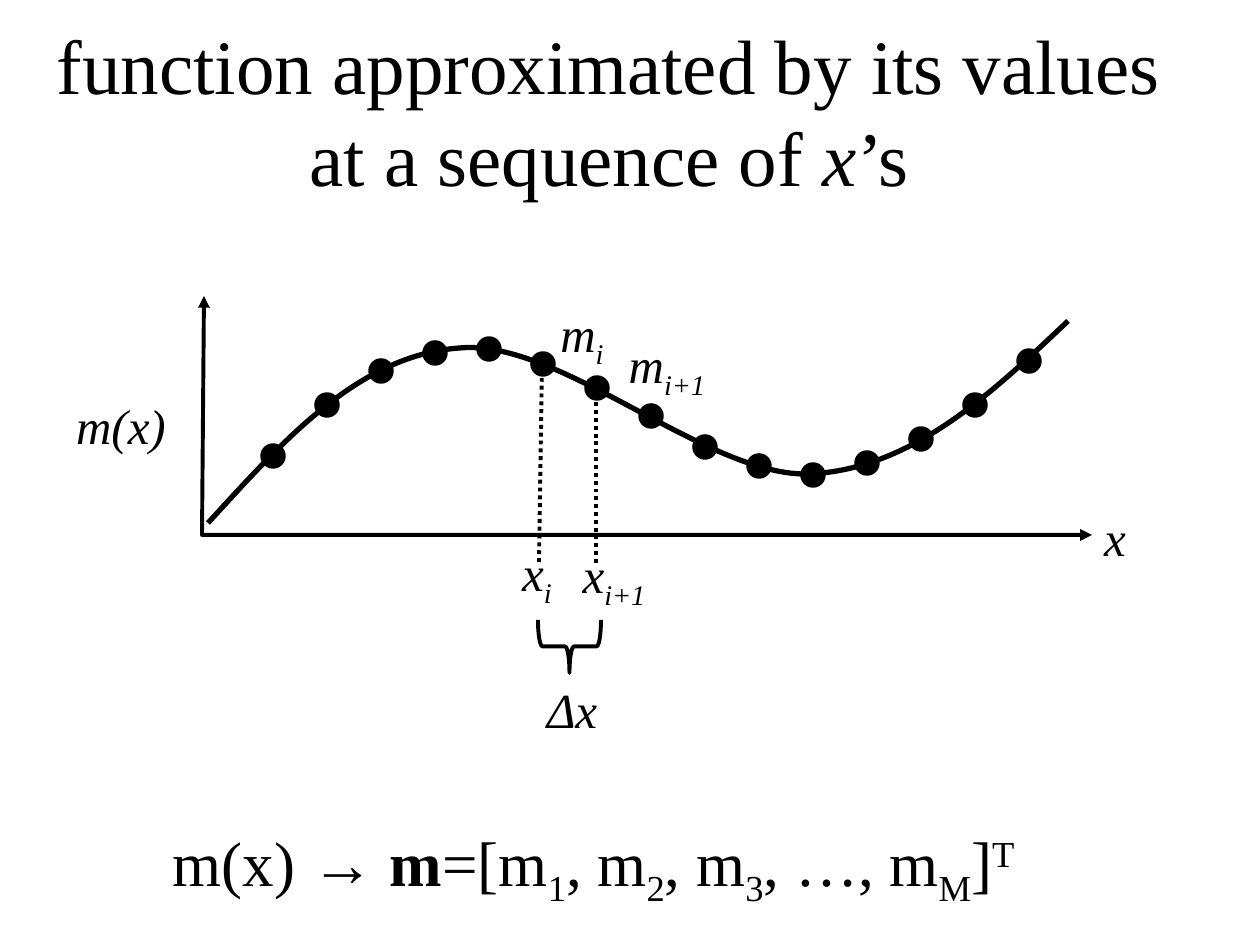
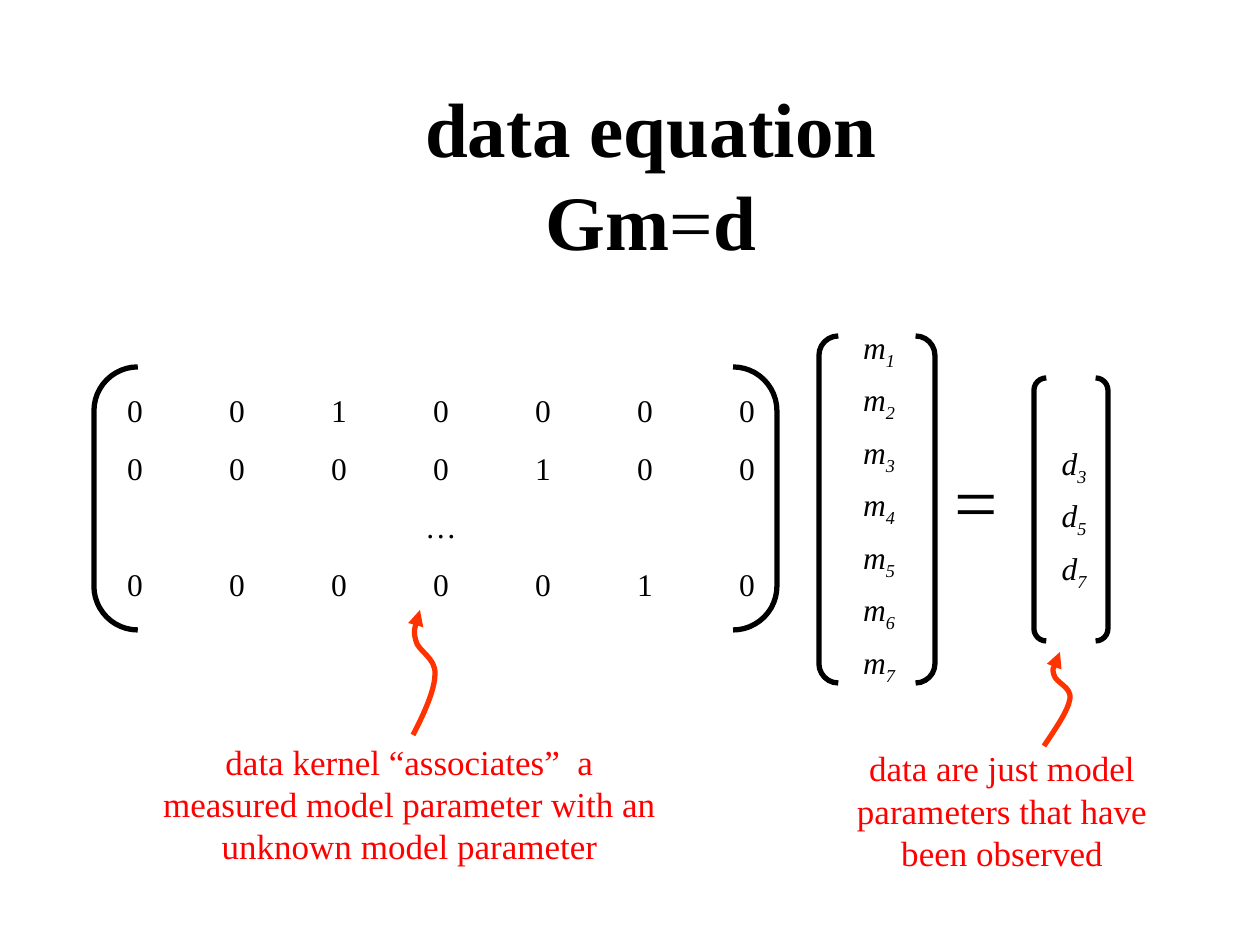
import lxml.etree
import pptx
import pptx.dml.color
import pptx.enum.dml
import pptx.enum.shapes
import pptx.enum.text
import pptx.oxml.ns
import pptx.util

PX = 9144000 / 1260  # EMU in one px, 126 px to the inch
FONT = "Times New Roman"
BLACK, WHITE, RED, ORANGE = "000000", "FFFFFF", "FF0000", "FF3300"
SHAPE = pptx.enum.shapes.MSO_SHAPE

# Text is a list of (text, style) runs; style holds any of i, b, sub, sup.
# Boxes are (left, top, width, height).
TITLE_SIZE = 44
SEQUENCE_TITLE = [("function approximated by its values at a sequence of ", ""),
                  ("x", "i"), ("’s", "")]
SEQUENCE_TITLE_BOX = (42, 31, 1134, 158)
AXES = [(204, 296), (202, 535), (1092, 535)]
CURVE = [(208, 523), (284, 440), (359, 355), (460, 348), (561, 339), (708, 478),
         (810, 474), (911, 469), (989, 396), (1068, 321)]
DOT_LEFT, DOT_STEP, DOT_SIZE = 273, 54, 22
DOT_YS = [456, 405, 371, 353, 349, 364, 388, 416, 447, 466, 475, 463, 439, 405, 361]
DROP_LINES = [((539, 562), (542, 364)), ((596, 563), (596, 392))]
LABEL_SIZE = (200, 105)
LABELS = [  # centre x, centre y, main text, subscript
    (121, 424, "m(x)", ""), (1115, 536, "x", ""),
    (582, 336, "m", "i"), (667, 367, "m", "i+1"),
    (537, 575, "x", "i"), (614, 577, "x", "i+1"), (572, 708, "Δx", "")]
BRACE_BOX = (543, 615, 53, 63)
VECTOR = [("m(x) ", ""), ("→ ", "i"), ("m", "b"), ("=[m", ""), ("1", "sub"),
          (", m", ""), ("2", "sub"), (", m", ""), ("3", "sub"),
          (", …, m", ""), ("M", "sub"), ("]", ""), ("T ", "sup")]
VECTOR_BOX = (31, 787, 1134, 158)

EQUATION_TITLE = [("data equation", "b"), ("\n", ""), ("Gm", "b"), ("=", ""), ("d", "b")]
EQUATION_TITLE_BOX = (84, 73, 1134, 200)
KERNEL = ["0010000", "0000100", "   …   ", "0000010"]
TABLES = [  # left, top, column width, row height, rows of cells of runs
    (84, 388, 102, 58, [[[(c.strip(), "")] for c in row] for row in KERNEL]),
    (819, 325, 120, 52, [[[("m", "i"), (n, "i sub")]] for n in "1234567"]),
    (1014, 441, 120, 52, [[[("d", "i"), (n, "i sub")]] for n in "357"])]
BRACKETS = [(94, 367, 683, 263), (819, 336, 116, 347), (1034, 378, 74, 263)]
EQUALS_BOX = (892, 421, 168, 158)
NOTES = [  # text, box, arrow curve from its head
    ("data are just model parameters that have been observed", (829, 768, 346, 84),
     [(1060, 652), (1057, 660), (1052, 668), (1054, 675), (1056, 683), (1072, 687),
      (1070, 699), (1068, 711), (1056, 728), (1044, 746)]),
    ("data kernel “associates”  a measured model parameter with an unknown model parameter",
     (147, 746, 525, 116),
     [(420, 610), (417, 620), (413, 630), (416, 641), (418, 651), (436, 658),
      (435, 674), (435, 689), (425, 712), (413, 735)])]


def emu(*lengths):
    return [round(v * PX) for v in lengths]


def rgb(value):
    return pptx.dml.color.RGBColor.from_string(value)


def sub(parent, tag, **attrs):
    """Append an XML child in the drawing namespaces."""
    return lxml.etree.SubElement(parent, pptx.oxml.ns.qn(tag), attrs)


def write(tf, runs, size, color=BLACK, anchor=True):
    if anchor:
        tf.word_wrap = True
        tf.auto_size = pptx.enum.text.MSO_AUTO_SIZE.NONE
        tf.vertical_anchor = pptx.enum.text.MSO_ANCHOR.MIDDLE
    p = tf.paragraphs[0]
    p.alignment = pptx.enum.text.PP_ALIGN.CENTER
    p.font.name, p.font.size = FONT, pptx.util.Pt(size)
    p.font.color.rgb = rgb(color)
    for text, style in runs:
        if text == "\n":
            p.add_line_break()
            continue
        r = p.add_run()
        r.text = text
        styles = style.split()
        if "i" in styles:
            r.font.italic = True
        if "b" in styles:
            r.font.bold = True
        for name, shift in (("sub", "-25000"), ("sup", "30000")):
            if name in styles:
                r.font._element.set("baseline", shift)


def add_text(s, box, runs, size, color=BLACK):
    write(s.shapes.add_textbox(*emu(*box)).text_frame, runs, size, color)


def add_slide(prs, title, box):
    s = prs.slides.add_slide(prs.slide_layouts[5])
    sp = s.shapes.title
    sp.left, sp.top, sp.width, sp.height = emu(*box)
    write(sp.text_frame, title, TITLE_SIZE)
    return s


def style_line(sp, width, color=BLACK, heads=()):
    sp.line.color.rgb = rgb(color)
    sp.line.width = pptx.util.Pt(width)
    for end in heads:
        sub(sp.line._get_or_add_ln(), "a:" + end, type="triangle")


def add_outline(s, kind, box, width):
    sp = s.shapes.add_shape(kind, *emu(*box))
    sp.shadow.inherit = False
    sp.fill.background()
    style_line(sp, width)
    return sp


def add_path(s, points, width, color=BLACK, heads=(), curved=False):
    """Draw an open path; a curved one takes its points as cubic Bézier controls."""
    builder = s.shapes.build_freeform(*points[0], scale=PX)
    builder.add_line_segments(points[1:], close=False)
    sp = builder.convert_to_shape()
    sp.shadow.inherit = False
    sp.fill.background()
    style_line(sp, width, color, heads)
    if curved:
        path = sp._element.find(".//" + pptx.oxml.ns.qn("a:path"))
        segments = path.findall(pptx.oxml.ns.qn("a:lnTo"))
        for i in range(0, len(segments), 3):
            curve = sub(path, "a:cubicBezTo")
            for segment in segments[i:i + 3]:
                curve.append(segment[0])
                path.remove(segment)


def add_matrix(s, left, top, col_width, row_height, rows):
    n_rows, n_cols = len(rows), len(rows[0])
    box = emu(left, top, n_cols * col_width, n_rows * row_height)
    table = s.shapes.add_table(n_rows, n_cols, *box).table
    table.first_row = table.horz_banding = False
    for row, cells in zip(table.rows, rows):
        for cell, runs in zip(row.cells, cells):
            write(cell.text_frame, [r for r in runs if r[0]], 18, anchor=False)
            tc_pr = cell._tc.get_or_add_tcPr()
            for side in ("a:lnL", "a:lnR", "a:lnT", "a:lnB"):
                sub(sub(tc_pr, side, w="0"), "a:noFill")
            cell.fill.solid()
            cell.fill.fore_color.rgb = rgb(WHITE)


def build_sequence_slide(prs):
    s = add_slide(prs, SEQUENCE_TITLE, SEQUENCE_TITLE_BOX)
    add_path(s, CURVE, 3, curved=True)
    add_path(s, AXES, 2.25, heads=("headEnd", "tailEnd"))
    for i, y in enumerate(DOT_YS):
        x = DOT_LEFT + i * DOT_STEP
        half = DOT_SIZE // 2
        dot = add_outline(s, SHAPE.OVAL, (x - half, y - half, DOT_SIZE, DOT_SIZE), 2)
        dot.fill.solid()
        dot.fill.fore_color.rgb = rgb(BLACK)
    for start, end in DROP_LINES:
        line = s.shapes.add_connector(pptx.enum.shapes.MSO_CONNECTOR.STRAIGHT,
                                      *emu(*start, *end))
        style_line(line, 2.25)
        line.line.dash_style = pptx.enum.dml.MSO_LINE.ROUND_DOT
        sub(line._element.spPr, "a:effectLst")
    width, height = LABEL_SIZE
    for x, y, text, index in LABELS:
        runs = [(text, "i")] + ([(index, "i sub")] if index else [])
        add_text(s, (x - width // 2, y - height // 2, width, height), runs, 28)
    add_outline(s, SHAPE.RIGHT_BRACE, BRACE_BOX, 2.25).rotation = 90
    add_text(s, VECTOR_BOX, VECTOR, 36)


def build_equation_slide(prs):
    s = add_slide(prs, EQUATION_TITLE, EQUATION_TITLE_BOX)
    for table in TABLES:
        add_matrix(s, *table)
    for box in BRACKETS:
        add_outline(s, SHAPE.DOUBLE_BRACKET, box, 3)
    add_text(s, EQUALS_BOX, [("=", "")], TITLE_SIZE)
    for text, box, arrow in NOTES:
        add_path(s, arrow, 3, ORANGE, heads=("headEnd",), curved=True)
        add_text(s, box, [(text, "")], 20, RED)


def main():
    prs = pptx.Presentation()
    prs.slide_width, prs.slide_height = emu(1260, 945)
    build_sequence_slide(prs)
    build_equation_slide(prs)
    prs.save("out.pptx")


if __name__ == "__main__":
    main()
